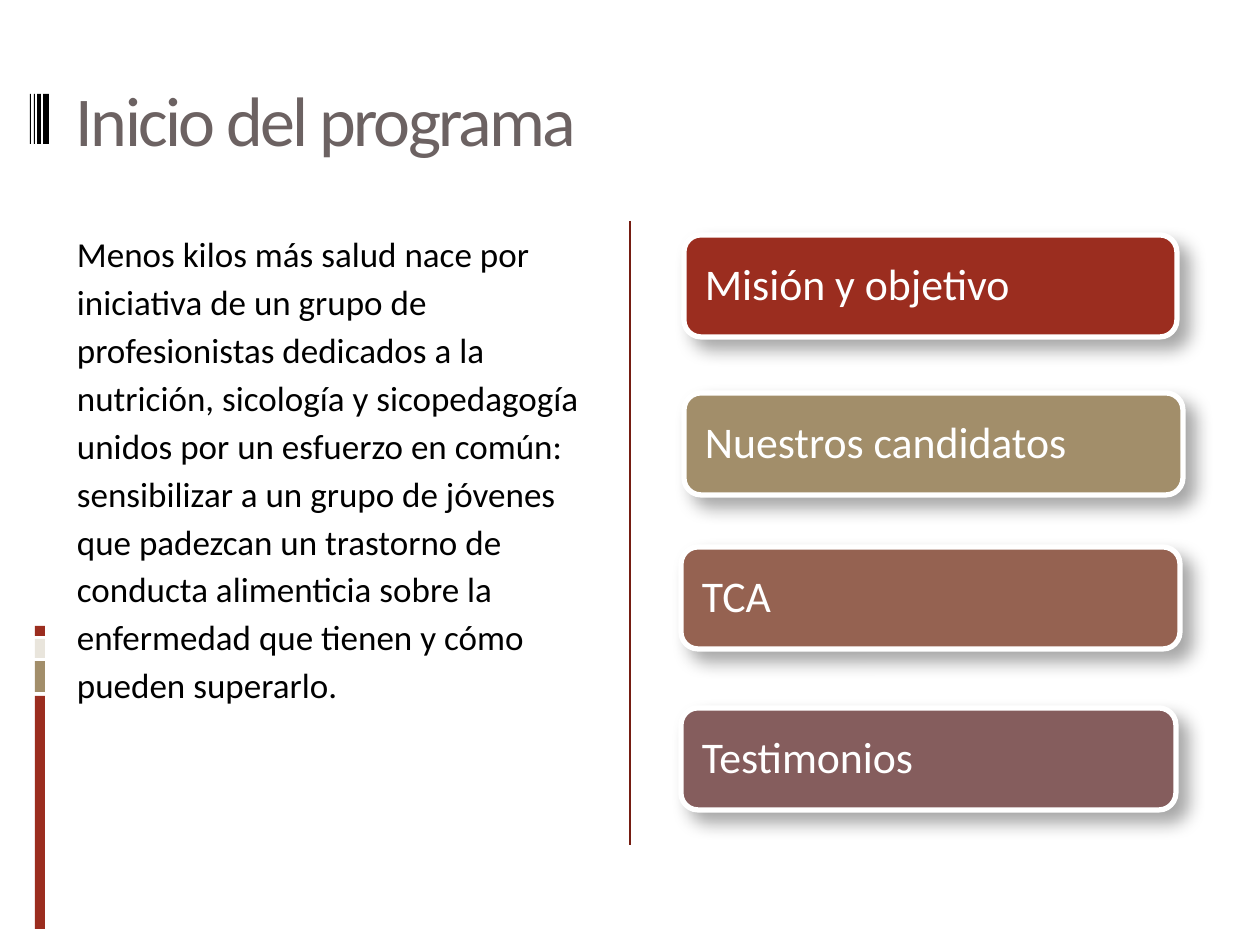
from lxml import etree
from pptx import Presentation
from pptx import util as u
from pptx.dml.color import RGBColor
from pptx.enum import shapes, text
from pptx.oxml import parse_xml
from pptx.oxml.ns import nsdecls, qn

SCALE = 914400 // 126
COLORS = {
    "red": "9B2D1F", "sand": "A28E6A", "cream": "E9E5DC", "clay": "956251",
    "mauve": "855D5D", "divider": "751D12", "title": "6C6262",
    "black": "000000", "white": "FFFFFF",
}


def px(value):
    return u.Emu(value * SCALE)


def color(name):
    return RGBColor.from_string(COLORS[name])


def write(shape, content, *, size, fill, anchor=text.MSO_ANCHOR.TOP,
          inset=13, inset_y=6, line_spacing=1.0, before=0, tracking=0):
    frame = shape.text_frame
    frame.word_wrap = True
    frame.vertical_anchor = anchor
    frame.margin_left = frame.margin_right = px(inset)
    frame.margin_top = frame.margin_bottom = px(inset_y)
    paragraph = frame.paragraphs[0]
    paragraph.alignment = text.PP_ALIGN.LEFT
    paragraph.line_spacing = line_spacing
    paragraph.space_before = u.Pt(before)
    run = paragraph.add_run()
    run.text = content
    run.font.name = "Calibri"
    run.font.size = u.Pt(size)
    run.font.color.rgb = color(fill)
    if tracking:
        run.font._element.set("spc", str(tracking))


class SlideBuilder:
    def __init__(self, slide):
        self.slide = slide

    def box(self, kind, left, top, width, height, fill):
        shape = self.slide.shapes.add_shape(
            kind, px(left), px(top), px(width), px(height))
        shape.shadow.inherit = False
        shape.fill.solid()
        shape.fill.fore_color.rgb = color(fill)
        shape.line.fill.background()
        return shape

    def bar(self, left, top, width, height, fill):
        self.box(shapes.MSO_SHAPE.RECTANGLE, left, top, width, height, fill)

    def divider(self, x, top, bottom):
        line = self.slide.shapes.add_connector(
            shapes.MSO_CONNECTOR.STRAIGHT, px(x), px(top), px(x), px(bottom))
        line.line.color.rgb = color("divider")
        line.line.width = u.Pt(0.75)
        etree.SubElement(line._element.spPr, qn("a:effectLst"))

    def text_box(self, left, top, width, height, content, **style):
        shape = self.slide.shapes.add_textbox(
            px(left), px(top), px(width), px(height))
        write(shape, content, **style)

    def button(self, left, top, width, height, content, fill):
        shape = self.box(shapes.MSO_SHAPE.ROUNDED_RECTANGLE,
                         left, top, width, height, fill)
        shape.line.color.rgb = color("white")
        shape.line.width = u.Pt(3)
        self.cast_shadow(shape)
        write(shape, content, size=25, fill="white", inset=16, inset_y=0,
              anchor=text.MSO_ANCHOR.MIDDLE, line_spacing=0.9)

    def cast_shadow(self, shape):
        """Give the shape a soft shadow to the lower right."""
        effects = shape._element.spPr.find(qn("a:effectLst"))
        effects.append(parse_xml(
            f'<a:outerShdw {nsdecls("a")} blurRad="{u.Pt(10.2)}" '
            f'dist="{u.Pt(8)}" dir="2700000" algn="tl" rotWithShape="0">'
            f'<a:srgbClr val="{COLORS["black"]}"><a:alpha val="35000"/>'
            '</a:srgbClr></a:outerShdw>'))


def main():
    presentation = Presentation()
    presentation.slide_width = px(1260)
    presentation.slide_height = px(945)
    builder = SlideBuilder(
        presentation.slides.add_slide(presentation.slide_layouts[6]))

    for top, height, fill in ((696, 233, "red"), (661, 31, "sand"),
                              (639, 19, "cream"), (626, 10, "red")):
        builder.bar(35, top, 10, height, fill)
    for left, width in ((43, 6), (37, 4), (34, 1), (30, 1)):
        builder.bar(left, 94, width, 50, "black")
    builder.divider(630, 221, 845)

    builder.text_box(63, 29, 1134, 179, "Inicio del programa", size=40,
                     fill="title", anchor=text.MSO_ANCHOR.MIDDLE, tracking=-150)
    builder.text_box(
        64, 221, 557, 624,
        "Menos kilos más salud nace por iniciativa de un grupo de "
        "profesionistas dedicados a la nutrición, sicología y sicopedagogía "
        "unidos por un esfuerzo en común: sensibilizar a un grupo de jóvenes "
        "que padezcan un trastorno de conducta alimenticia sobre la "
        "enfermedad que tienen y cómo pueden superarlo.",
        size=20, fill="black", line_spacing=1.14, before=7)

    for left, top, width, content, fill in (
            (684, 235, 493, "Misión y objetivo", "red"),
            (684, 393, 499, "Nuestros candidatos", "sand"),
            (681, 547, 499, "TCA", "clay"),
            (681, 708, 495, "Testimonios", "mauve")):
        builder.button(left, top, width, 102, content, fill)

    presentation.save("out.pptx")


if __name__ == "__main__":
    main()
